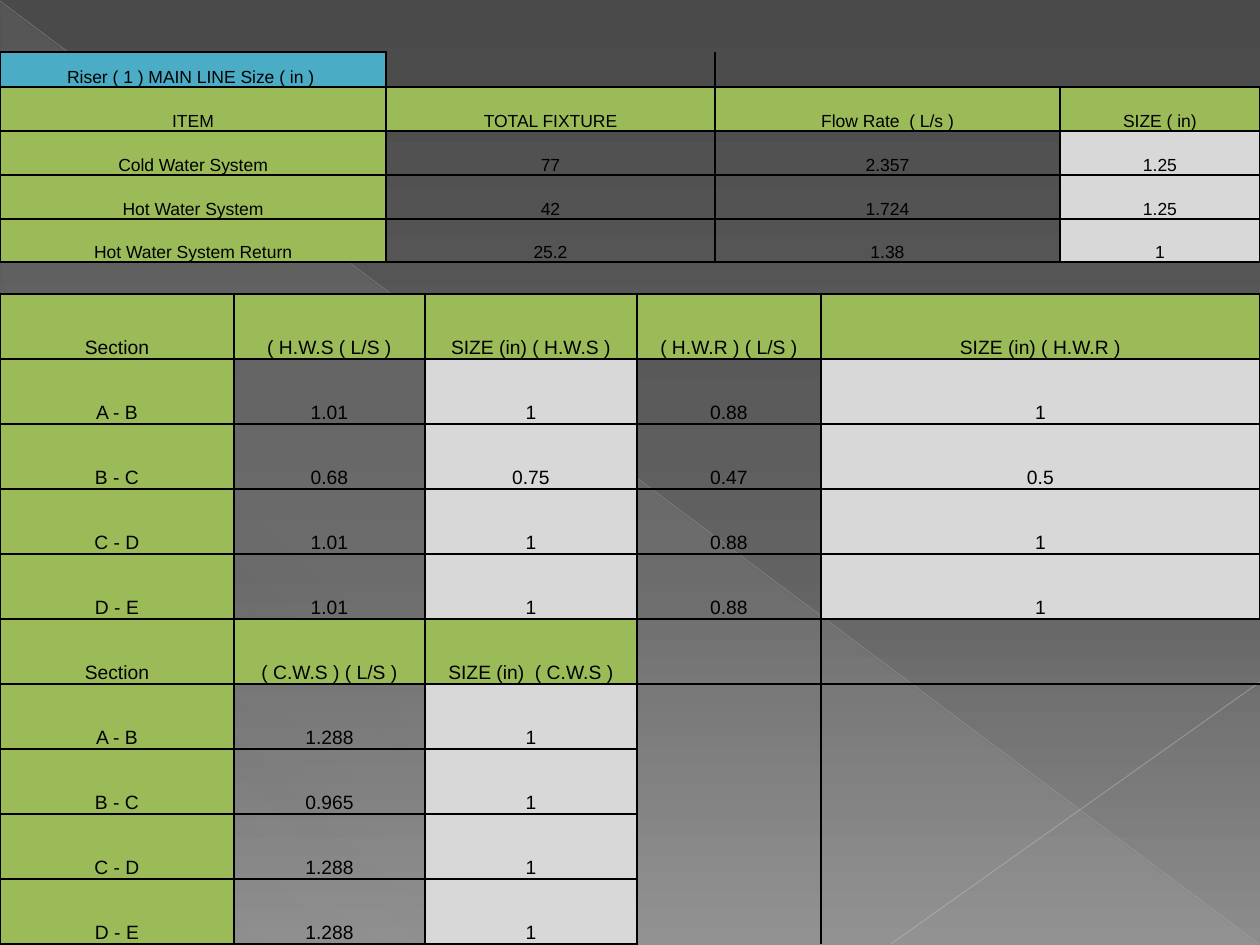
"""Build the riser pipe sizing slide with its two tables."""
from dataclasses import dataclass

import lxml.etree
import pptx
import pptx.dml.color
import pptx.enum.shapes
import pptx.enum.text
import pptx.oxml.ns
import pptx.util

RGB = pptx.dml.color.RGBColor
qn = pptx.oxml.ns.qn
sub = lxml.etree.SubElement

PX = 914400 // 126
WIDTH, HEIGHT = 1260, 945
NO_STYLE = "{2D5ABB26-0587-4C30-8999-92F81FD0307C}"
FONT = "Arial"

BLACK = RGB(0x00, 0x00, 0x00)
GREEN = RGB(0x9B, 0xBB, 0x59)
BLUE = RGB(0x4B, 0xAC, 0xC6)
GREY = RGB(0xD8, 0xD8, 0xD8)
VEIL = RGB(0xD2, 0xD2, 0xD2)
BG_TOP = RGB(0x4A, 0x4A, 0x4A)
BG_MIDDLE = RGB(0x62, 0x62, 0x62)
BG_BOTTOM = RGB(0x8C, 0x8C, 0x8C)
LONG_LINE = RGB(0xBF, 0xBF, 0xBF)
SHORT_LINE = RGB(0xC6, 0xC6, 0xC6)


@dataclass
class Stop:
    position: int
    color: RGB
    opacity: int = 100


@dataclass
class Diagonal:
    start: tuple[int, int]
    end: tuple[int, int]
    color: RGB
    width: float
    opacity: int


@dataclass
class Grid:
    top: int
    columns: list[int]
    heights: list[int]
    size: int
    column_fills: list[RGB | None]
    row_fills: dict[int, RGB]
    rows: list[list[str]]


BACKGROUND = [Stop(0, BG_TOP), Stop(60, BG_MIDDLE), Stop(100, BG_BOTTOM)]
TRIANGLE = [Stop(0, VEIL, 10), Stop(70, VEIL, 8), Stop(100, VEIL, 1)]

DIAGONALS = [
    Diagonal((0, 1), (1259, 944), LONG_LINE, 0.39, 35),
    Diagonal((1260, 682), (891, 944), SHORT_LINE, 0.47, 45),
]

SECTIONS = Grid(
    294, [234, 191, 212, 184, 439], [65] * 10, 11,
    [GREEN, None, GREY, None, GREY], {0: GREEN, 5: GREEN},
    [
        ["Section", "( H.W.S ( L/S )", "SIZE (in) ( H.W.S )", "( H.W.R ) ( L/S )", "SIZE (in) ( H.W.R )"],
        ["A - B", "1.01", "1", "0.88", "1"],
        ["B - C", "0.68", "0.75", "0.47", "0.5"],
        ["C - D", "1.01", "1", "0.88", "1"],
        ["D - E", "1.01", "1", "0.88", "1"],
        ["Section", "( C.W.S ) ( L/S )", "SIZE (in)  ( C.W.S )", "", ""],
        ["A - B", "1.288", "1", "", ""],
        ["B - C", "0.965", "1", "", ""],
        ["C - D", "1.288", "1", "", ""],
        ["D - E", "1.288", "1", "", ""],
    ],
)

MAIN_LINE = Grid(
    52, [386, 329, 345, 200], [35, 44, 44, 44, 43], 10,
    [GREEN, None, None, GREY], {0: BLUE, 1: GREEN},
    [
        ["Riser ( 1 ) MAIN LINE Size ( in ) ", "", "", ""],
        ["ITEM", "TOTAL FIXTURE", "Flow Rate  ( L/s )", "SIZE ( in)"],
        ["Cold Water System", "77", "2.357", "1.25"],
        ["Hot Water System", "42", "1.724", "1.25"],
        ["Hot Water System Return", "25.2", "1.38", "1"],
    ],
)


def set_opacity(color, opacity: int) -> None:
    if opacity < 100:
        sub(color, qn("a:alpha"), val=str(opacity * 1000))


def set_gradient(props, stops: list[Stop], angle: int) -> None:
    solid = props.find(qn("a:solidFill"))
    grad = lxml.etree.Element(qn("a:gradFill"), rotWithShape="1")
    gs_lst = sub(grad, qn("a:gsLst"))
    for stop in stops:
        gs = sub(gs_lst, qn("a:gs"), pos=str(stop.position * 1000))
        set_opacity(sub(gs, qn("a:srgbClr"), val=str(stop.color)), stop.opacity)
    sub(grad, qn("a:lin"), ang=str(angle * 60000), scaled="0")
    props.replace(solid, grad)


def add_backdrop(s) -> None:
    s.background.fill.solid()
    set_gradient(s.element.find(".//" + qn("p:bgPr")), BACKGROUND, 90)
    sp = s.shapes.add_shape(
        pptx.enum.shapes.MSO_SHAPE.RIGHT_TRIANGLE, 1 * PX, 3 * PX, 1257 * PX, 942 * PX)
    sp.shadow.inherit = False
    sp.line.fill.background()
    sp.fill.solid()
    set_gradient(sp.element.spPr, TRIANGLE, 133)


def add_diagonal(s, d: Diagonal) -> None:
    sp = s.shapes.add_connector(
        pptx.enum.shapes.MSO_CONNECTOR.STRAIGHT, *(v * PX for v in d.start + d.end))
    sp.line.color.rgb = d.color
    sp.line.width = pptx.util.Pt(d.width)
    set_opacity(sp.element.spPr.find(".//" + qn("a:srgbClr")), d.opacity)
    sub(sp.element.spPr, qn("a:effectLst"))


def add_borders(cell, rows: list[list[str]], i: int, j: int) -> None:
    tc_pr = cell.fill and cell._tc.get_or_add_tcPr()
    for side, di, dj in (("L", 0, -1), ("R", 0, 1), ("T", -1, 0), ("B", 1, 0)):
        y, x = i + di, j + dj
        inside = 0 <= y < len(rows) and 0 <= x < len(rows[0])
        if rows[i][j] or (inside and rows[y][x]):
            ln = sub(tc_pr, qn(f"a:ln{side}"), w=str(pptx.util.Pt(1)))
            sub(sub(ln, qn("a:solidFill")), qn("a:srgbClr"), val=str(BLACK))


def write_cell(cell, text: str, size: int) -> None:
    cell.margin_left = cell.margin_right = 9 * PX
    cell.margin_top = cell.margin_bottom = 0
    cell.vertical_anchor = pptx.enum.text.MSO_ANCHOR.BOTTOM
    p = cell.text_frame.paragraphs[0]
    p.alignment = pptx.enum.text.PP_ALIGN.CENTER
    p.line_spacing = 1.15
    if not text:
        sub(p._p, qn("a:endParaRPr"), sz=str(size * 100))
        return
    r = p.add_run()
    r.text = text
    r.font.name = FONT
    r.font.size = pptx.util.Pt(size)
    r.font.color.rgb = BLACK


def add_grid(s, grid: Grid) -> None:
    frame = s.shapes.add_table(
        len(grid.rows), len(grid.columns), 0, grid.top * PX,
        sum(grid.columns) * PX, sum(grid.heights) * PX)
    table = frame.table
    table.first_row = table.horz_banding = False
    frame.element.find(".//" + qn("a:tableStyleId")).text = NO_STYLE
    for column, width in zip(table.columns, grid.columns):
        column.width = width * PX
    for row, height in zip(table.rows, grid.heights):
        row.height = height * PX
    for i, texts in enumerate(grid.rows):
        for j, text in enumerate(texts):
            cell = table.cell(i, j)
            write_cell(cell, text, grid.size)
            add_borders(cell, grid.rows, i, j)
            color = grid.row_fills.get(i, grid.column_fills[j])
            if text and color is not None:
                cell.fill.solid()
                cell.fill.fore_color.rgb = color
            else:
                cell.fill.background()


def main() -> None:
    prs = pptx.Presentation()
    prs.slide_width, prs.slide_height = WIDTH * PX, HEIGHT * PX
    s = prs.slides.add_slide(prs.slide_layouts[6])
    add_backdrop(s)
    for diagonal in DIAGONALS:
        add_diagonal(s, diagonal)
    for grid in (SECTIONS, MAIN_LINE):
        add_grid(s, grid)
    prs.save("out.pptx")


if __name__ == "__main__":
    main()
